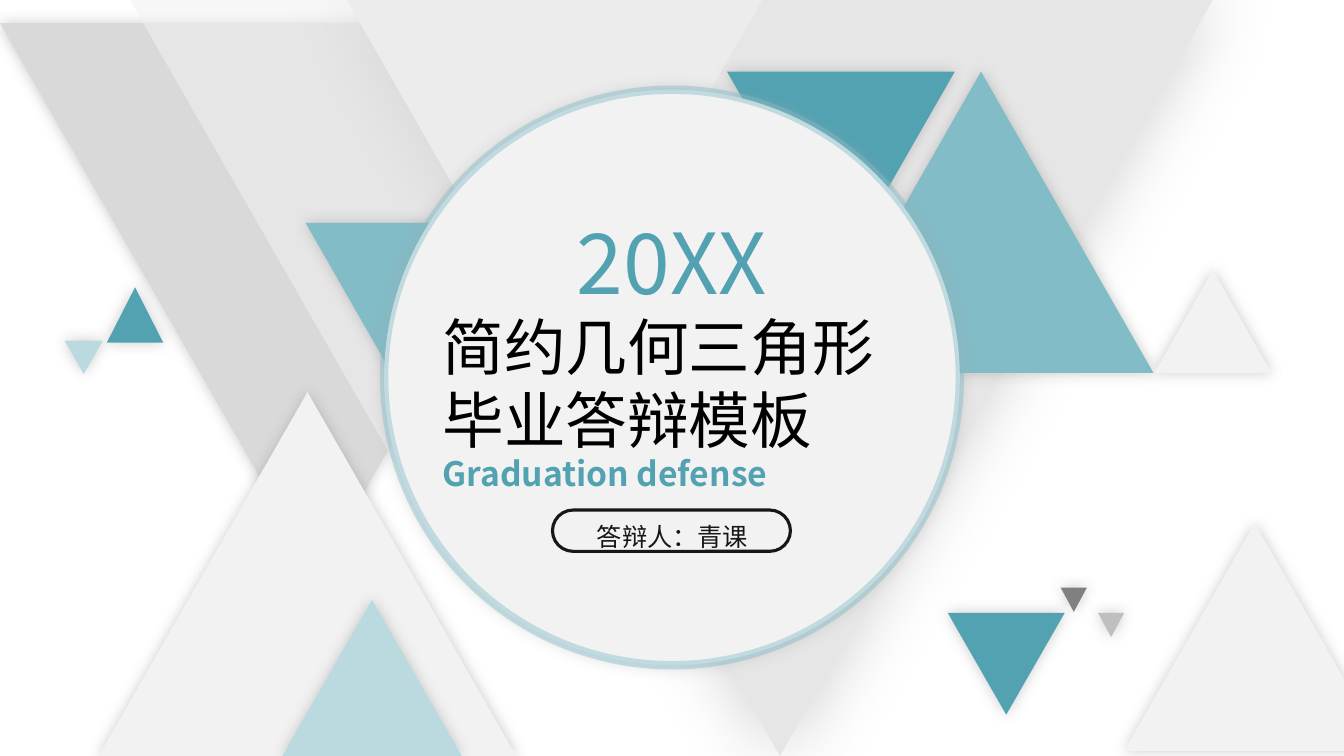
from dataclasses import dataclass
from typing import Optional

from lxml.etree import SubElement as Sub
from pptx import Presentation
from pptx.dml.color import RGBColor as RGB
from pptx.enum.shapes import MSO_SHAPE as Kind
from pptx.enum.text import MSO_AUTO_SIZE as Auto, PP_ALIGN as Align
from pptx.oxml.ns import qn
from pptx.util import Inches, Pt


@dataclass(frozen=True)
class Theme:
    font: str = "Noto Sans CJK SC"
    deep: str = "52A2B2"
    mid: str = "82BCC7"
    soft: str = "BADAE0"
    pale: str = "F2F2F2"
    light: str = "E7E6E6"
    grey: str = "D9D9D9"
    dim: str = "BFBFBF"
    dark: str = "808080"
    shade: str = "A6A6A6"
    ink: str = "181717"
    black: str = "000000"
    year: int = 60
    title: int = 44
    sub: int = 24
    name: int = 18


@dataclass(frozen=True)
class Tri:
    left: float
    top: float
    width: float
    height: float
    color: str
    down: bool = False
    blur: Optional[int] = 10
    alpha: int = 100


T = Theme()

# Triangles, from back to front
TRIS = [
    Tri(0, 0.23, 6.27, 5.48, T.grey, down=True),
    Tri(3.44, 0, 8.59, 7.5, T.light, down=True, blur=53),
    Tri(0.98, 3.89, 4.14, 3.61, T.pale),
    Tri(2.8, 5.95, 1.78, 1.55, T.soft),
    Tri(1.29, 0, 6.27, 5.48, T.pale, down=True, blur=None, alpha=54),
    Tri(8.02, 0.71, 3.42, 2.99, T.mid),
    Tri(3.03, 2.21, 3.54, 3.09, T.mid, down=True),
    Tri(9.4, 6.08, 1.16, 1.01, T.deep, down=True),
    Tri(11.45, 2.68, 1.16, 1.02, T.pale),
    Tri(7.21, 0.71, 2.26, 1.97, T.deep, down=True),
    Tri(1.06, 2.85, 0.56, 0.55, T.deep),
    Tri(0.64, 3.38, 0.38, 0.33, T.soft, down=True),
    Tri(10.52, 5.83, 0.26, 0.24, T.dark, down=True),
    Tri(10.89, 6.08, 0.26, 0.24, T.dim, down=True),
    Tri(11.15, 5.19, 2.59, 2.26, T.pale),
]


def fade(paint, alpha: int) -> None:
    """Set the opacity, in percent, of a solid fill."""
    for tone in paint.iter(qn("a:srgbClr")):
        Sub(tone, qn("a:alpha"), val=str(alpha * 1000))


def glow(shape, color: str, blur: int) -> None:
    """Add a soft shadow on all sides."""
    box = shape.element.spPr.find(qn("a:effectLst"))
    cast = Sub(box, qn("a:outerShdw"), blurRad=str(Pt(blur)), dist="0",
               dir="0", algn="ctr", rotWithShape="0")
    tone = Sub(cast, qn("a:srgbClr"), val=color)
    Sub(tone, qn("a:alpha"), val="40000")


def draw(group, kind, box: tuple, fill: Optional[str] = None,
         line: Optional[str] = None, width: float = 0):
    shape = group.shapes.add_shape(kind, *map(Inches, box))
    shape.shadow.inherit = False
    if fill:
        shape.fill.solid()
        shape.fill.fore_color.rgb = RGB.from_string(fill)
    else:
        shape.fill.background()
    if line:
        shape.line.color.rgb = RGB.from_string(line)
        shape.line.width = Pt(width)
    else:
        shape.line.fill.background()
    return shape


def frame(group, box: tuple):
    text = group.shapes.add_textbox(*map(Inches, box)).text_frame
    text.word_wrap = True
    text.auto_size = Auto.SHAPE_TO_FIT_TEXT
    return text


def write(para, text: str, *, size: int, color: str, lead: float,
          align=Align.CENTER, bold: bool = False) -> None:
    para.alignment = align
    para.line_spacing = Pt(lead)
    run = para.add_run()
    run.text = text
    font = run.font
    font.name, font.size, font.bold = T.font, Pt(size), bold
    font.color.rgb = RGB.from_string(color)
    Sub(run._r.get_or_add_rPr(), qn("a:ea"), typeface=T.font)


def main() -> None:
    deck = Presentation()
    deck.slide_width, deck.slide_height = Inches(13.33), Inches(7.5)
    slide = deck.slides.add_slide(deck.slide_layouts[6])

    # Backdrop of triangles
    back = slide.shapes.add_group_shape()
    for tri in TRIS:
        box = (tri.left, tri.top, tri.width, tri.height)
        shape = draw(back, Kind.ISOSCELES_TRIANGLE, box, tri.color)
        shape.rotation = 180 if tri.down else 0
        if tri.alpha < 100:
            fade(shape.element.spPr.find(qn("a:solidFill")), tri.alpha)
        if tri.blur:
            glow(shape, T.dark, tri.blur)

    # Round title plate
    plate = slide.shapes.add_group_shape()
    disc = draw(plate, Kind.OVAL, (3.81, 0.89, 5.71, 5.71), T.pale, T.mid, 6)
    fade(disc.element.spPr.find(qn("a:ln")), 43)
    glow(disc, T.shade, 10)

    # Title lines
    title = frame(plate, (4.29, 1.96, 4.74, 3))
    write(title.paragraphs[0], "20XX", size=T.year, color=T.deep, lead=77.5)
    for text, lead in (("简约几何三角形", 51), ("毕业答辩模板", 52.5)):
        write(title.add_paragraph(), text, size=T.title, color=T.black,
              lead=lead, align=Align.JUSTIFY)
    write(title.add_paragraph(), "Graduation defense", size=T.sub,
          color=T.deep, lead=26.5, align=Align.JUSTIFY, bold=True)

    # Speaker in a pill outline
    name = frame(plate, (5.56, 5.09, 2.22, 0.4))
    write(name.paragraphs[0], "答辩人：青课", size=T.name, color=T.ink, lead=24)
    pill = draw(plate, Kind.ROUNDED_RECTANGLE, (5.48, 5.06, 2.36, 0.41),
                line=T.ink, width=2.25)
    pill.adjustments[0] = 0.5

    deck.save("out.pptx")


if __name__ == "__main__":
    main()
